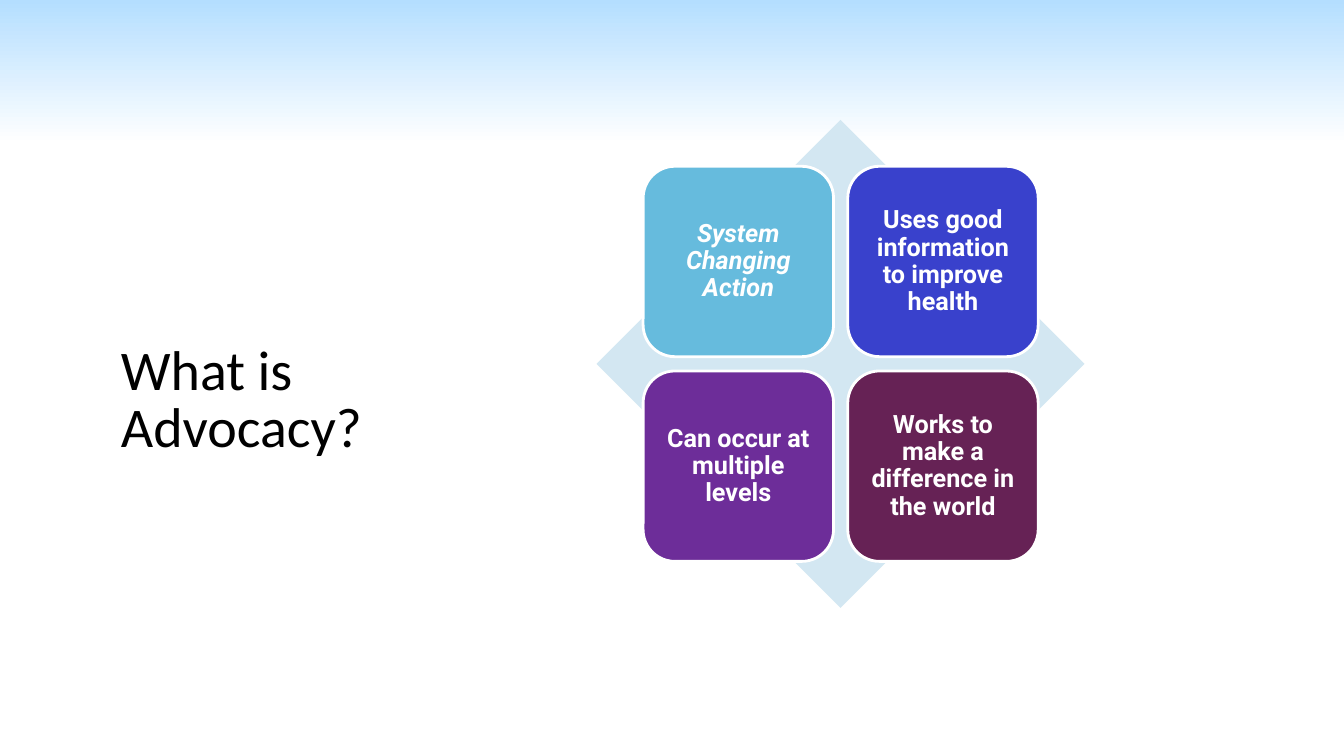
from dataclasses import dataclass

from pptx import Presentation
from pptx.dml.color import RGBColor
from pptx.enum.shapes import MSO_SHAPE
from pptx.enum.text import MSO_ANCHOR, PP_ALIGN
from pptx.shapes.autoshape import Shape
from pptx.slide import Slide
from pptx.util import Pt

COLORS = {
    "sky": "B4DEFF",
    "white": "FFFFFF",
    "black": "000000",
    "diamond": "D3E7F2",
    "cyan": "66BBDD",
    "blue": "3941CC",
    "purple": "6D2D99",
    "plum": "662255",
}
CARD_LEFT, CARD_TOP = 459.4, 118.8
CARD_SIZE, CARD_PITCH = 136, 146.2


@dataclass
class Card:
    text: str
    color: str
    italic: bool = False


CARDS = [
    Card("System Changing Action", "cyan", italic=True),
    Card("Uses good information to improve health", "blue"),
    Card("Can occur at multiple levels", "purple"),
    Card("Works to make a difference in the world", "plum"),
]


def rgb(name: str) -> RGBColor:
    return RGBColor.from_string(COLORS[name])


def write_text(sp: Shape, text: str, *, font: str, size: float, color: str,
               align: PP_ALIGN, anchor: MSO_ANCHOR, inset: float = 0,
               spacing: float = 1, after: float = 0,
               bold: bool = False, italic: bool = False) -> None:
    tf = sp.text_frame
    tf.word_wrap = True
    tf.vertical_anchor = anchor
    tf.margin_left = tf.margin_right = Pt(inset)
    tf.margin_top = tf.margin_bottom = Pt(inset)
    p = tf.paragraphs[0]
    p.alignment = align
    p.line_spacing = spacing
    p.space_after = Pt(after)
    r = p.add_run()
    r.text = text
    r.font.name = font
    r.font.size = Pt(size)
    r.font.bold = bold
    r.font.italic = italic
    r.font.color.rgb = rgb(color)


def add_block(s: Slide, kind: MSO_SHAPE, left: float, top: float,
              width: float, height: float, color: str) -> Shape:
    sp = s.shapes.add_shape(kind, Pt(left), Pt(top), Pt(width), Pt(height))
    sp.shadow.inherit = False
    sp.fill.solid()
    sp.fill.fore_color.rgb = rgb(color)
    sp.line.fill.background()
    return sp


def add_header_band(s: Slide) -> None:
    sp = add_block(s, MSO_SHAPE.RECTANGLE, 0, 0, 960, 103, "sky")
    sp.fill.gradient()
    sp.fill.gradient_angle = 270
    for stop, position, color in zip(sp.fill.gradient_stops, (0, 1), ("sky", "white")):
        stop.position = position
        stop.color.rgb = rgb(color)


def add_card(s: Slide, card: Card, row: int, col: int) -> None:
    sp = add_block(s, MSO_SHAPE.ROUNDED_RECTANGLE,
                   CARD_LEFT + col * CARD_PITCH, CARD_TOP + row * CARD_PITCH,
                   CARD_SIZE, CARD_SIZE, card.color)
    sp.line.color.rgb = rgb("white")
    sp.line.width = Pt(2)
    write_text(sp, card.text, font="Roboto", size=18, color="white",
               align=PP_ALIGN.CENTER, anchor=MSO_ANCHOR.MIDDLE, inset=5,
               spacing=0.9, after=6.3, bold=True, italic=card.italic)


def main() -> None:
    prs = Presentation()
    prs.slide_width, prs.slide_height = Pt(960), Pt(540)
    s = prs.slides.add_slide(prs.slide_layouts[6])
    add_header_band(s)
    title = s.shapes.add_textbox(Pt(86.4), Pt(17.3), Pt(186.5), Pt(310.3))
    write_text(title, "What is Advocacy?", font="Calibri", size=40, color="black",
               align=PP_ALIGN.LEFT, anchor=MSO_ANCHOR.BOTTOM, spacing=0.85)
    add_block(s, MSO_SHAPE.DIAMOND, 426.2, 85.7, 348.5, 348.5, "diamond")
    for i, card in enumerate(CARDS):
        add_card(s, card, *divmod(i, 2))
    prs.save("out.pptx")


if __name__ == "__main__":
    main()
